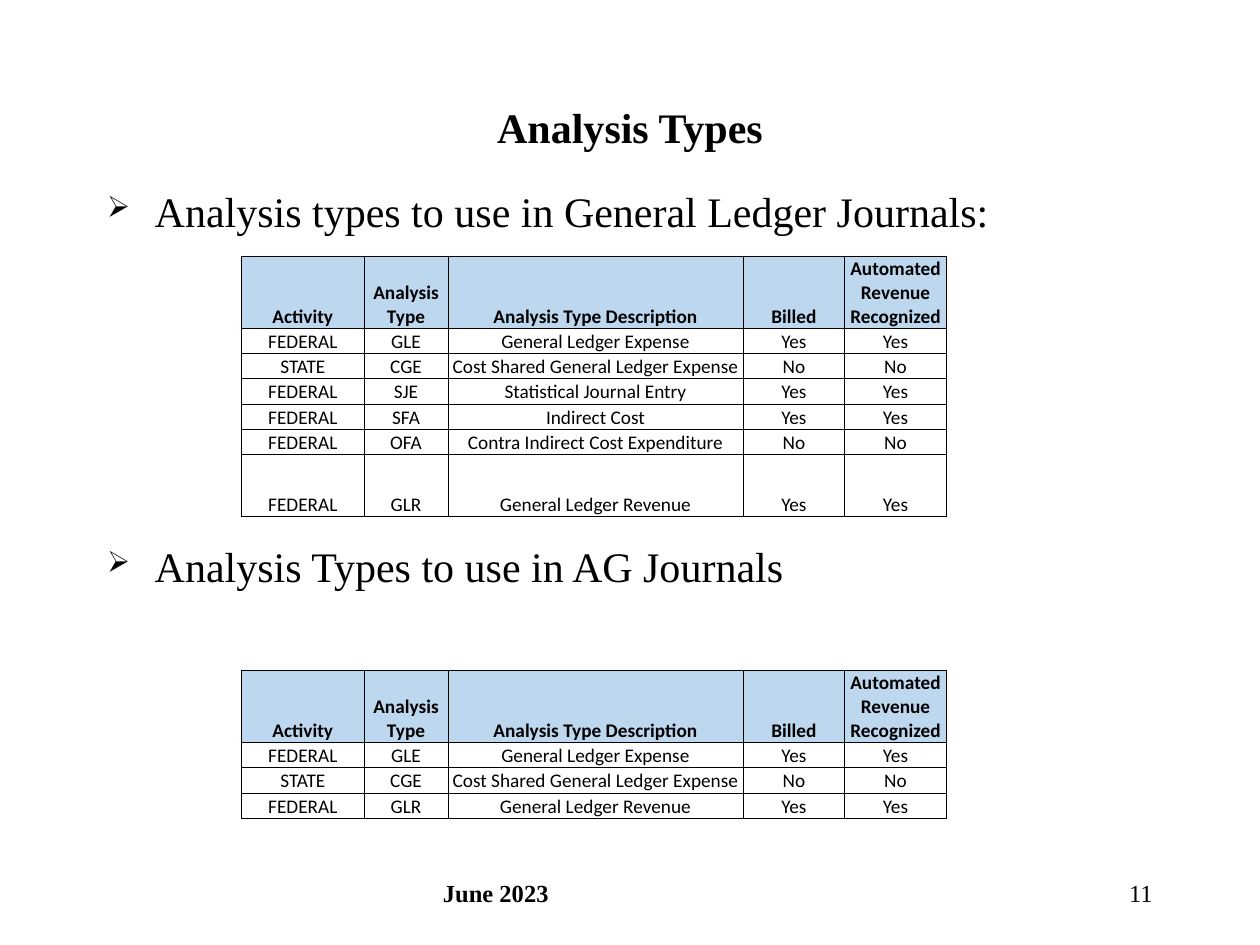
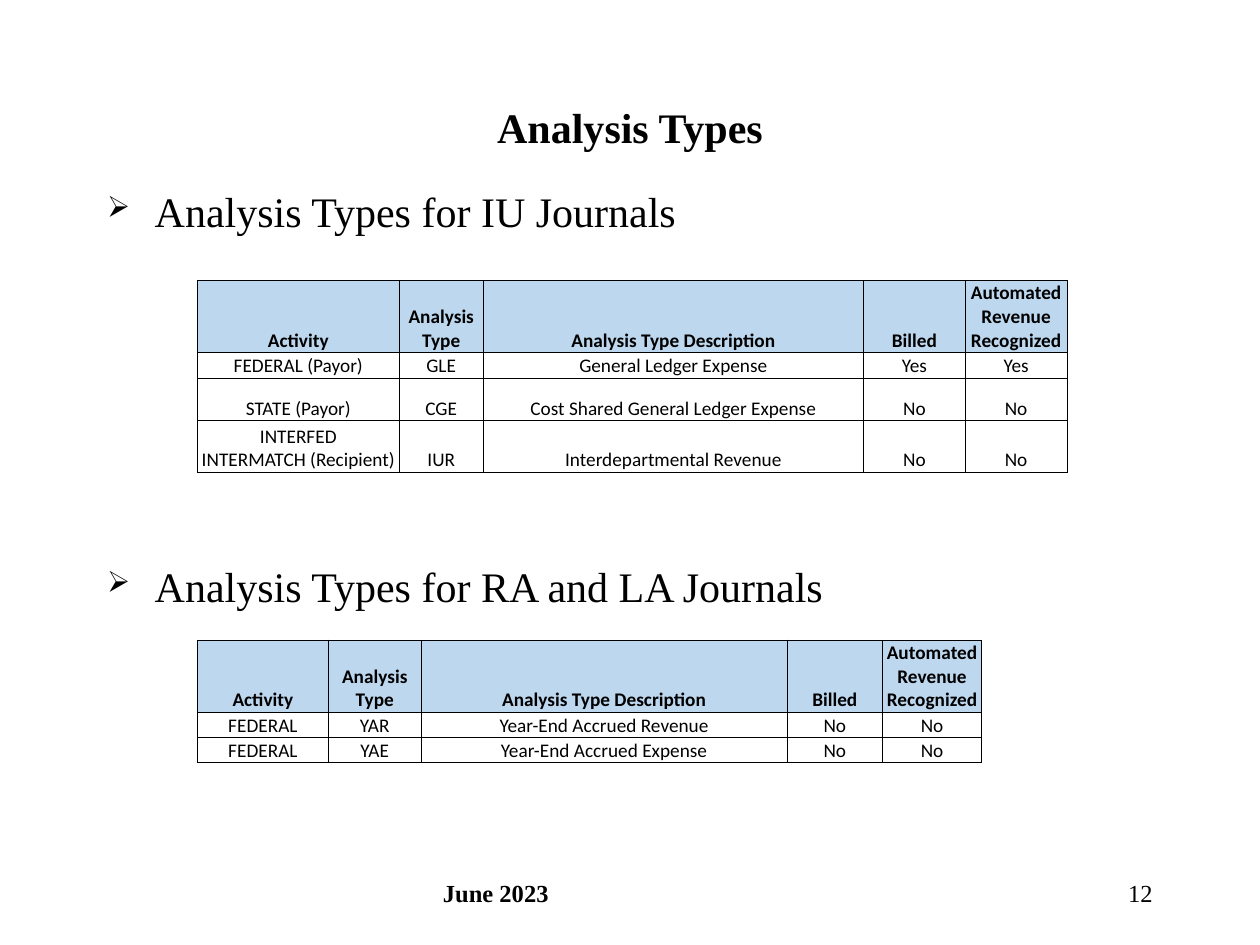
"""Build two slides of analysis types, each with two headed tables."""
from dataclasses import dataclass

from lxml import etree
from pptx import Presentation
from pptx import util as u
from pptx.dml.color import RGBColor
from pptx.enum import text
from pptx.oxml.ns import qn


@dataclass(frozen=True)
class Theme:
    ink: str = "000000"
    header: str = "BDD7EE"
    serif: str = "Times New Roman"
    sans: str = "Calibri"
    heading: int = 24
    footer: int = 14
    cell: int = 11
    border: float = 0.5


THEME = Theme()
CENTER, LEFT, RIGHT = text.PP_ALIGN.CENTER, text.PP_ALIGN.LEFT, text.PP_ALIGN.RIGHT
MIDDLE, TOP, BOTTOM = text.MSO_ANCHOR.MIDDLE, text.MSO_ANCHOR.TOP, text.MSO_ANCHOR.BOTTOM

TITLE = "Analysis Types"
DATE = "June 2023"
FIRST_PAGE = 11
HEADER = ("Activity", "Analysis Type", "Analysis Type Description", "Billed",
          "Automated Revenue Recognized")

HEADER_HEIGHT, ROW_HEIGHT = 1.45, 0.51
JOURNAL_COLUMNS = (2.47, 1.69, 5.95, 2.05, 2.05)

PAGES = [
    {
        "bullets": ("Analysis types to use in General Ledger Journals:",
                    "Analysis Types to use in AG Journals"),
        "gap": 174,
        "tables": [
            {"at": (4.87, 5.16), "columns": JOURNAL_COLUMNS, "tall": {6: 1.24}, "rows": [
                ("FEDERAL", "GLE", "General Ledger Expense", "Yes", "Yes"),
                ("STATE", "CGE", "Cost Shared General Ledger Expense", "No", "No"),
                ("FEDERAL", "SJE", "Statistical Journal Entry", "Yes", "Yes"),
                ("FEDERAL", "SFA", "Indirect Cost", "Yes", "Yes"),
                ("FEDERAL", "OFA", "Contra Indirect Cost Expenditure", "No", "No"),
                ("FEDERAL", "GLR", "General Ledger Revenue", "Yes", "Yes")]},
            {"at": (4.87, 13.51), "columns": JOURNAL_COLUMNS, "tall": {}, "rows": [
                ("FEDERAL", "GLE", "General Ledger Expense", "Yes", "Yes"),
                ("STATE", "CGE", "Cost Shared General Ledger Expense", "No", "No"),
                ("FEDERAL", "GLR", "General Ledger Revenue", "Yes", "Yes")]},
        ],
    },
    {
        "bullets": ("Analysis Types for IU Journals",
                    "Analysis Types for RA and LA Journals"),
        "gap": 185.5,
        "tables": [
            {"at": (3.98, 5.65), "columns": (4.07, 1.69, 7.67, 2.05, 2.05),
             "tall": {2: 0.86, 3: 1.04}, "rows": [
                ("FEDERAL (Payor)", "GLE", "General Ledger Expense", "Yes", "Yes"),
                ("STATE (Payor)", "CGE", "Cost Shared General Ledger Expense", "No", "No"),
                ("INTERFED\nINTERMATCH (Recipient)", "IUR", "Interdepartmental Revenue",
                 "No", "No")]},
            {"at": (3.98, 12.9), "columns": (2.64, 1.87, 7.38, 1.92, 2.0), "tall": {}, "rows": [
                ("FEDERAL", "YAR", "Year-End Accrued Revenue", "No", "No"),
                ("FEDERAL", "YAE", "Year-End Accrued Expense", "No", "No")]},
        ],
    },
]


def set_all(target, values):
    for name, value in values.items():
        setattr(target, name, value)


def write(frame, words, size, align, font=THEME.serif, bold=False):
    frame.text = words
    for para in frame.paragraphs:
        para.alignment = align
        for span in para.runs:
            set_all(span.font, {"name": font, "size": u.Pt(size), "bold": bold})
            span.font.color.rgb = RGBColor.from_string(THEME.ink)


def place(shape, left, top, width, height, anchor=MIDDLE):
    set_all(shape, dict(zip(("left", "top", "width", "height"),
                            map(u.Cm, (left, top, width, height)))))
    set_all(shape.text_frame, {"word_wrap": True, "vertical_anchor": anchor,
                               "auto_size": text.MSO_AUTO_SIZE.NONE})
    return shape.text_frame


def add_box(page, *area, anchor=MIDDLE):
    return place(page.shapes.add_textbox(0, 0, 0, 0), *area, anchor=anchor)


def add_bullets(page, lines, gap):
    frame = add_box(page, 1.91, 3.61, 21.59, 13.54, anchor=TOP)
    write(frame, "\n".join(lines), THEME.heading, LEFT)
    for para in frame.paragraphs:
        props = para._p.get_or_add_pPr()
        indent = u.Cm(0.96)
        props.set("marL", str(indent))
        props.set("indent", str(-indent))
        color = etree.SubElement(props, qn("a:buClr"))
        etree.SubElement(color, qn("a:srgbClr"), val=THEME.ink)
        etree.SubElement(props, qn("a:buSzPct"), val="70000")
        etree.SubElement(props, qn("a:buChar"), char="➢")
    frame.paragraphs[1].space_before = u.Pt(gap)


def add_borders(cell):
    props = cell._tc.get_or_add_tcPr()
    for side in ("lnL", "lnR", "lnT", "lnB"):
        line = etree.SubElement(props, qn(f"a:{side}"), w=str(u.Pt(THEME.border)))
        fill = etree.SubElement(line, qn("a:solidFill"))
        etree.SubElement(fill, qn("a:srgbClr"), val=THEME.ink)


def add_grid(page, at, columns, tall, rows):
    heights = [HEADER_HEIGHT] + [tall.get(i, ROW_HEIGHT) for i in range(1, len(rows) + 1)]
    area = map(u.Cm, (*at, sum(columns), sum(heights)))
    table = page.shapes.add_table(len(heights), len(columns), *area).table
    table.horz_banding = False
    for column, width in zip(table.columns, columns):
        column.width = u.Cm(width)
    for index, (row, height, words) in enumerate(zip(table.rows, heights, [HEADER, *rows])):
        row.height = u.Cm(height)
        for cell, word in zip(row.cells, words):
            set_all(cell, {"margin_left": u.Cm(0.02), "margin_right": u.Cm(0.02),
                           "margin_top": u.Cm(0.02), "margin_bottom": 0,
                           "vertical_anchor": BOTTOM})
            write(cell.text_frame, word, THEME.cell, CENTER, THEME.sans, index == 0)
            add_borders(cell)
            if index == 0:
                cell.fill.solid()
                cell.fill.fore_color.rgb = RGBColor.from_string(THEME.header)
            else:
                cell.fill.background()


def add_page(deck, number, content):
    page = deck.slides.add_slide(deck.slide_layouts.get_by_name("Title Only"))
    title = place(page.shapes.title, 0, 1.91, 25.4, 1.27)
    write(title, TITLE, THEME.heading, CENTER, bold=True)
    add_bullets(page, content["bullets"], content["gap"])
    write(add_box(page, 18.2, 17.36, 5.29, 1.27), str(number), THEME.footer, RIGHT)
    write(add_box(page, 8.68, 17.36, 8.04, 1.27), DATE, THEME.footer, LEFT, bold=True)
    for grid in content["tables"]:
        add_grid(page, **grid)


def main():
    deck = Presentation()
    set_all(deck, {"slide_width": u.Cm(25.4), "slide_height": u.Cm(19.05)})
    for number, content in enumerate(PAGES, FIRST_PAGE):
        add_page(deck, number, content)
    deck.save("out.pptx")


if __name__ == "__main__":
    main()
